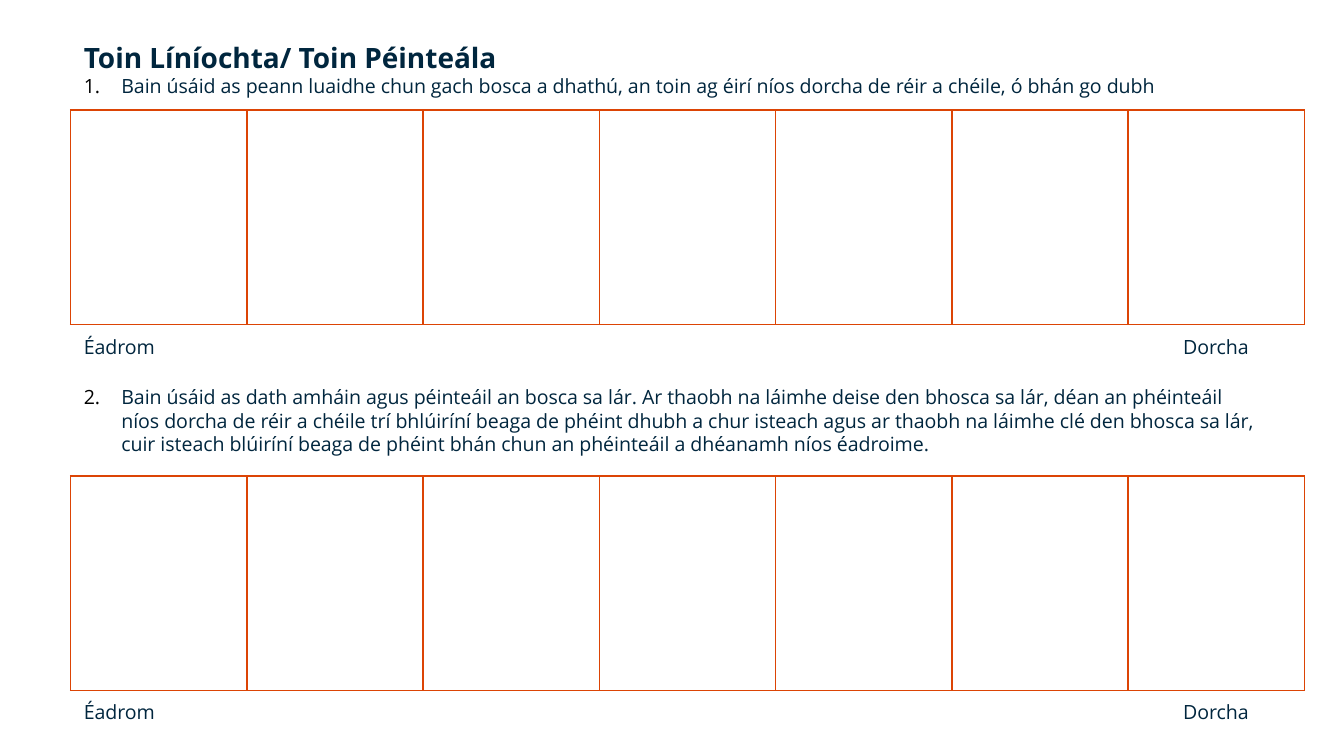
from pptx import Presentation
from pptx.dml.color import RGBColor
from pptx.enum.text import MSO_AUTO_SIZE
from pptx.oxml.ns import qn
from pptx.util import Inches, Pt
from lxml.etree import SubElement

COLORS = {"ink": "00263E", "number": "000000", "rule": "DC4405"}
TITLE = {"size": Pt(15), "bold": True}
BODY = {"size": Pt(10.5), "bold": False}
SLIDE_W = Inches(10)
SLIDE_H = SLIDE_W * 9 // 16
GRID = 100  # columns and rows on the slide
LEFT, BAND_W = 5.25, 91.8
BOXES = 7


def place(box):
    """Turn columns and rows of the grid into lengths."""
    x, y, w, h = box
    return (int(x * SLIDE_W / GRID), int(y * SLIDE_H / GRID),
            int(w * SLIDE_W / GRID), int(h * SLIDE_H / GRID))


def add_text(s, box):
    tf = s.shapes.add_textbox(*place(box)).text_frame
    tf.word_wrap = True
    tf.auto_size = MSO_AUTO_SIZE.SHAPE_TO_FIT_TEXT
    return tf


def write(p, text, style):
    r = p.add_run()
    r.text = text
    for name, value in {"name": "Open Sans", **style}.items():
        setattr(r.font, name, value)
    r.font.color.rgb = RGBColor.from_string(COLORS["ink"])


def number(p, start):
    pPr = p._p.get_or_add_pPr()
    pPr.set("marL", str(Inches(0.28)))
    pPr.set("indent", str(-Inches(0.28)))
    clr = SubElement(pPr, qn("a:buClr"))
    SubElement(clr, qn("a:srgbClr"), val=COLORS["number"])
    SubElement(pPr, qn("a:buFont"), typeface="+mj-lt")
    SubElement(pPr, qn("a:buAutoNum"), type="arabicPeriod", startAt=str(start))


def instructions(s, box, start, task, title=None):
    tf = add_text(s, box)
    p = tf.paragraphs[0]
    if title:
        write(p, title, TITLE)
        p = tf.add_paragraph()
    number(p, start)
    write(p, task, BODY)


def tone_boxes(s, box):
    x, y, w, h = place(box)
    table = s.shapes.add_table(1, BOXES, x, y, w, h).table
    table.first_row = table.horz_banding = False
    for col in table.columns:
        col.width = w // BOXES
    for i, cell in enumerate(table.iter_cells()):
        tcPr = cell._tc.get_or_add_tcPr()
        # The outer frame is paler than the dividers
        outer = {"lnL": i == 0, "lnR": i == BOXES - 1, "lnT": True, "lnB": True}
        for side, pale in outer.items():
            ln = SubElement(tcPr, qn(f"a:{side}"), w=str(Pt(1)))
            fill = SubElement(ln, qn("a:solidFill"))
            clr = SubElement(fill, qn("a:srgbClr"), val=COLORS["rule"])
            if pale:
                SubElement(clr, qn("a:alpha"), val="35000")
        cell.fill.background()


def tone_labels(s, box):
    p = add_text(s, box).paragraphs[0]
    tabs = SubElement(p._p.get_or_add_pPr(), qn("a:tabLst"))
    SubElement(tabs, qn("a:tab"), pos=str(Inches(8.18)), algn="l")
    write(p, "Éadrom\tDorcha", BODY)


def main():
    prs = Presentation()
    prs.slide_width, prs.slide_height = SLIDE_W, SLIDE_H
    s = prs.slides.add_slide(prs.slide_layouts[6])

    # Drawing exercise
    instructions(s, (LEFT, 4.52, 88, 9.4), 1,
                 "Bain úsáid as peann luaidhe chun gach bosca a dhathú, an toin ag "
                 "éirí níos dorcha de réir a chéile, ó bhán go dubh",
                 title="Toin Líníochta/ Toin Péinteála")
    # Painting exercise
    instructions(s, (LEFT, 50.05, 89.7, 11.2), 2,
                 "Bain úsáid as dath amháin agus péinteáil an bosca sa lár. Ar thaobh "
                 "na láimhe deise den bhosca sa lár, déan an phéinteáil níos dorcha de "
                 "réir a chéile trí bhlúiríní beaga de phéint dhubh a chur isteach agus "
                 "ar thaobh na láimhe clé den bhosca sa lár, cuir isteach blúiríní beaga "
                 "de phéint bhán chun an phéinteáil a dhéanamh níos éadroime.")

    # Rows of boxes with their labels
    for top, label_top in ((14.55, 43.45), (62.95, 91.72)):
        tone_boxes(s, (LEFT, top, BAND_W, 28.4))
        tone_labels(s, (LEFT, label_top, BAND_W, 5))

    prs.save("out.pptx")


if __name__ == "__main__":
    main()
